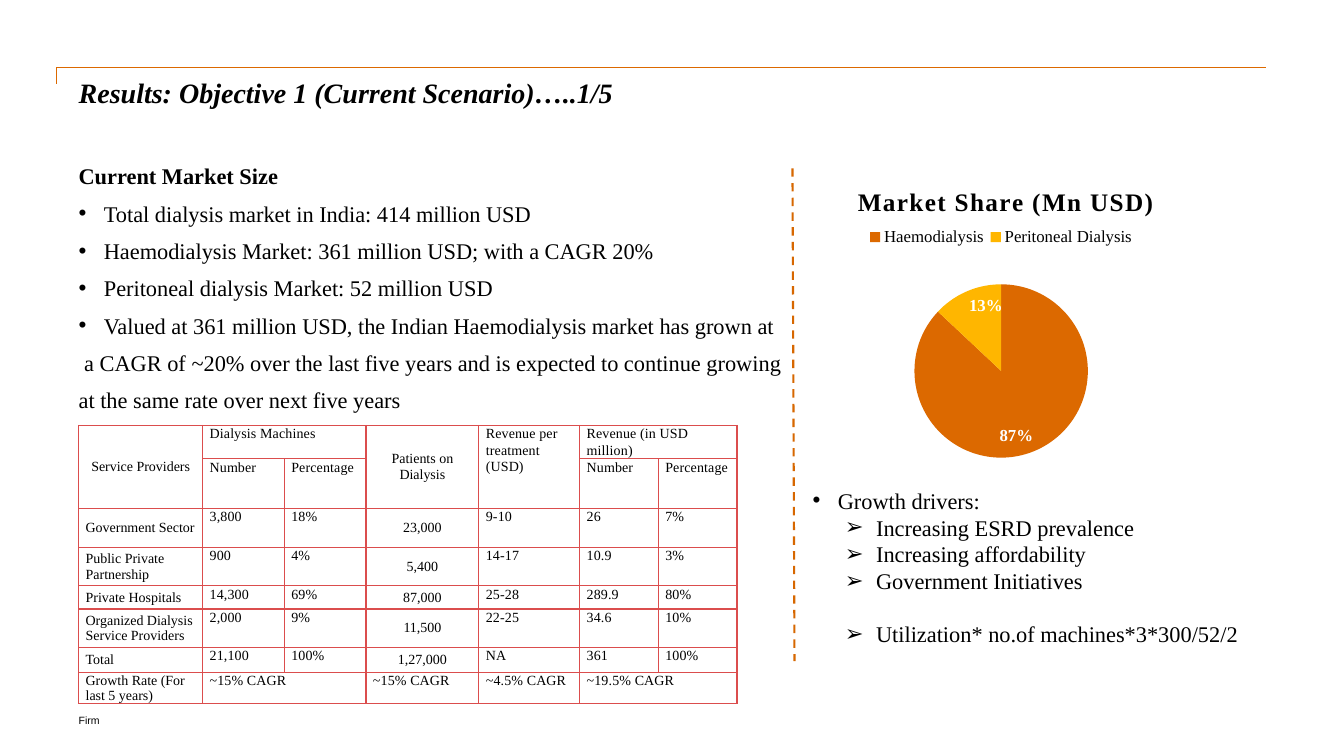
from lxml.etree import SubElement
from pptx import Presentation
from pptx.chart.data import CategoryChartData
from pptx.dml.color import RGBColor
from pptx.enum.chart import XL_CHART_TYPE, XL_LABEL_POSITION, XL_LEGEND_POSITION
from pptx.enum.dml import MSO_LINE
from pptx.enum.shapes import MSO_CONNECTOR
from pptx.enum.text import MSO_ANCHOR, MSO_AUTO_SIZE, PP_ALIGN
from pptx.oxml import parse_xml
from pptx.oxml.ns import nsdecls, qn
from pptx.util import Inches, Pt

COLORS = {"text": "000000", "orange": "DC6900", "yellow": "FFB600",
          "divider": "D76700", "border": "DB4D4D", "label": "FFFFFF"}
SERIF = "Times New Roman"
MARKET_LINES = [
    ("Current Market Size", None),
    ("Total dialysis market in India: 414 million USD", "•"),
    ("Haemodialysis Market: 361 million USD; with a CAGR 20%", "•"),
    ("Peritoneal dialysis Market: 52 million USD", "•"),
    ("Valued at 361 million USD, the Indian Haemodialysis market has grown at", "•"),
    (" a CAGR of ~20% over the last five years and is expected to continue growing", None),
    ("at the same rate over next five years", None),
]
DRIVERS = ["Increasing ESRD prevalence", "Increasing affordability",
           "Government Initiatives", "Utilization* no.of machines*3*300/52/2"]
COLUMN_WIDTHS = [1.23, 0.81, 0.81, 1.12, 1, 0.78, 0.78]
ROW_HEIGHTS = [0.33, 0.49, 0.39, 0.38, 0.23, 0.38, 0.25, 0.31]
PROVIDERS = [
    ["Service Providers", "Dialysis Machines", "", "Patients on Dialysis",
     "Revenue per treatment (USD)", "Revenue (in USD million)", ""],
    ["", "Number", "Percentage", "", "", "Number", "Percentage"],
    ["Government Sector", "3,800", "18%", "23,000", "9-10", "26", "7%"],
    ["Public Private Partnership", "900", "4%", "5,400", "14-17", "10.9", "3%"],
    ["Private Hospitals", "14,300", "69%", "87,000", "25-28", "289.9", "80%"],
    ["Organized Dialysis Service Providers", "2,000", "9%", "11,500", "22-25", "34.6", "10%"],
    ["Total", "21,100", "100%", "1,27,000", "NA", "361", "100%"],
    ["Growth Rate (For last 5 years)", "~15% CAGR", "", "~15% CAGR",
     "~4.5% CAGR", "~19.5% CAGR", ""],
]
MERGES = [(0, 0, 1, 0), (0, 1, 0, 2), (0, 3, 1, 3), (0, 4, 1, 4),
          (0, 5, 0, 6), (7, 1, 7, 2), (7, 5, 7, 6)]


def color(name):
    """Return the named palette colour."""
    return RGBColor.from_string(COLORS[name])


def style(font, size, name=SERIF, fill="text", bold=False, italic=False):
    """Apply typeface, size, colour and weight to a font."""
    font.name, font.size, font.bold, font.italic = name, Pt(size), bold, italic
    font.color.rgb = color(fill)


def write(para, text, size=16, align=PP_ALIGN.LEFT, line=1, after=0, before=0,
          bullet=None, margin=0, hanging=0, tracking=0, **font):
    """Write formatted text into a paragraph."""
    span = para.add_run()
    span.text = text
    style(span.font, size, **font)
    if tracking:
        span._r.get_or_add_rPr().set("spc", str(tracking))
    para.alignment, para.line_spacing = align, line
    para.space_after, para.space_before = Pt(after), Pt(before)
    properties = para._p.get_or_add_pPr()
    properties.set("marL", str(Inches(margin)))
    properties.set("indent", str(-Inches(hanging)))
    if bullet:
        SubElement(properties, qn("a:buFont")).set("typeface", "Arial")
        SubElement(properties, qn("a:buChar")).set("char", bullet)
    else:
        SubElement(properties, qn("a:buNone"))


def place(part, layout):
    """Give a chart part a manual layout as fractions of the chart."""
    tags = "".join(f'<c:{tag} val="{value}"/>' for tag, value in layout.items())
    holder = part.find(qn("c:layout"))
    if holder is not None:
        part.remove(holder)
    node = parse_xml(f'<c:layout {nsdecls("c")}><c:manualLayout>{tags}'
                     '</c:manualLayout></c:layout>')
    leading = [child for child in part
               if child.tag in (qn("c:tx"), qn("c:legendPos"), qn("c:legendEntry"))]
    part.insert(len(leading), node)


class MarketSlide:
    """Holds the slide and draws each kind of element on it."""

    def __init__(self, page):
        """Keep the slide to draw on."""
        self.page = page

    def frame(self, box, left, top, width, height, wrap=True):
        """Position a text shape and return its bare text frame."""
        box.left, box.top = Inches(left), Inches(top)
        box.width, box.height = Inches(width), Inches(height)
        frame = box.text_frame
        frame.margin_left = frame.margin_right = frame.margin_top = frame.margin_bottom = 0
        frame.word_wrap, frame.auto_size = wrap, MSO_AUTO_SIZE.NONE
        frame.vertical_anchor = MSO_ANCHOR.TOP
        return frame

    def text_box(self, *place_at, wrap=True):
        """Add a text box and return its frame."""
        return self.frame(self.page.shapes.add_textbox(0, 0, 0, 0), *place_at, wrap=wrap)

    def title_rule(self):
        """Draw the angled rule above the title."""
        builder = self.page.shapes.build_freeform(Inches(0.56), Inches(0.83))
        builder.add_line_segments([(Inches(0.56), Inches(0.67)),
                                   (Inches(12.56), Inches(0.67))], close=False)
        rule = builder.convert_to_shape()
        rule.shadow.inherit = False
        rule.fill.background()
        rule.line.color.rgb, rule.line.width = color("orange"), Pt(1)

    def divider(self):
        """Draw the dashed line between the two halves."""
        line = self.page.shapes.add_connector(
            MSO_CONNECTOR.STRAIGHT, Inches(7.86), Inches(1.67), Inches(7.88), Inches(6.56))
        line.line.color.rgb, line.line.width = color("divider"), Pt(1.5)
        line.line.dash_style = MSO_LINE.DASH
        SubElement(line._element.spPr, qn("a:effectLst"))

    def market_chart(self):
        """Add the market share pie."""
        data = CategoryChartData()
        data.categories = ["Haemodialysis", "Peritoneal Dialysis"]
        data.add_series("Series 1", (87, 13))
        chart = self.page.shapes.add_chart(
            XL_CHART_TYPE.PIE, Inches(7.4), Inches(1.64), Inches(5.06), Inches(3.24), data).chart
        style(chart.font, 10, name="Arial")
        chart.has_title = chart.has_legend = True
        write(chart.chart_title.text_frame.paragraphs[0], "Market Share (Mn USD)",
              size=18, align=PP_ALIGN.CENTER, bold=True, tracking=100)
        legend = chart.legend
        legend.position, legend.include_in_layout = XL_LEGEND_POSITION.TOP, False
        style(legend.font, 12)
        plot = chart.plots[0]
        plot.vary_by_categories = True
        for index, name in enumerate(("orange", "yellow")):
            fill = plot.series[0].points[index].format.fill
            fill.solid()
            fill.fore_color.rgb = color(name)
        plot.has_data_labels = True
        labels = plot.data_labels
        labels.show_percentage, labels.show_value = True, False
        labels.number_format, labels.number_format_is_linked = "0%", False
        labels.position = XL_LABEL_POSITION.INSIDE_END
        style(labels.font, 12, fill="label", bold=True)
        edges = {"xMode": "edge", "yMode": "edge"}
        place(chart.chart_title._element, edges | {"x": 0.21, "y": 0.05})
        place(legend._element, edges | {"x": 0.23, "y": 0.18, "w": 0.54, "h": 0.08})
        place(chart._chartSpace.chart.plotArea, {"layoutTarget": "inner"} | edges
              | {"x": 0.33, "y": 0.36, "w": 0.34, "h": 0.54})

    def provider_cell(self, cell, text, column):
        """Format one table cell and its borders."""
        cell.margin_left = cell.margin_right = Inches(0.07)
        cell.margin_top = cell.margin_bottom = 0
        cell.fill.background()
        properties = cell._tc.get_or_add_tcPr()
        for index, side in enumerate(("lnL", "lnR", "lnT", "lnB")):
            properties.insert(index, parse_xml(
                f'<a:{side} {nsdecls("a")} w="{Pt(1)}"><a:solidFill>'
                f'<a:srgbClr val="{COLORS["border"]}"/></a:solidFill></a:{side}>'))
        if not text:
            return
        middle = column == 0 or (column == 3 and "CAGR" not in text)
        centered = text == "Service Providers" or (column == 3 and middle)
        cell.vertical_anchor = MSO_ANCHOR.MIDDLE if middle else MSO_ANCHOR.TOP
        write(cell.text_frame.paragraphs[0], text, size=10,
              align=PP_ALIGN.CENTER if centered else PP_ALIGN.LEFT,
              line=1 if middle else 1.07, tracking=0 if middle else 10)

    def provider_table(self):
        """Add the table of service providers."""
        table = self.page.shapes.add_table(
            len(ROW_HEIGHTS), len(COLUMN_WIDTHS), Inches(0.78), Inches(4.22),
            Inches(sum(COLUMN_WIDTHS)), Inches(sum(ROW_HEIGHTS))).table
        table.first_row = table.horz_banding = False
        for column, width in zip(table.columns, COLUMN_WIDTHS):
            column.width = Inches(width)
        for row, height, texts in zip(table.rows, ROW_HEIGHTS, PROVIDERS):
            row.height = Inches(height)
            for index, (cell, text) in enumerate(zip(row.cells, texts)):
                self.provider_cell(cell, text, index)
        for top, left, bottom, right in MERGES:
            table.cell(top, left).merge(table.cell(bottom, right))


def main():
    """Build and save the deck."""
    deck = Presentation()
    deck.slide_width, deck.slide_height = Inches(13.33), Inches(7.5)
    page = deck.slides.add_slide(deck.slide_layouts[1])
    market = MarketSlide(page)
    title = market.frame(page.shapes.title, 0.78, 0.75, 11.78, 1)
    write(title.paragraphs[0], "Results: Objective 1 (Current Scenario)…..1/5",
          size=20, bold=True, italic=True)
    body = market.frame(page.placeholders[1], 0.78, 1.61, 11.78, 5.16)
    for index, (text, bullet) in enumerate(MARKET_LINES):
        para = body.add_paragraph() if index else body.paragraphs[0]
        indent = 0.25 if bullet else 0
        write(para, text, after=7.5, bullet=bullet, margin=indent, hanging=indent,
              bold=index == 0)
    market.title_rule()
    write(market.text_box(0.78, 7.08, 3.78, 0.17).paragraphs[0], "Firm", size=7.5, name="Arial")
    market.market_chart()
    market.provider_table()
    drivers = market.text_box(8.06, 4.83, 4.04, 1.72, wrap=False)
    write(drivers.paragraphs[0], "Growth drivers:", bullet="•", margin=0.25, hanging=0.25)
    for text in DRIVERS:
        write(drivers.add_paragraph(), text, bullet="➢", margin=0.63, hanging=0.31,
              before=18.4 if text == DRIVERS[-1] else 0)
    market.divider()
    deck.save("out.pptx")


if __name__ == "__main__":
    main()
